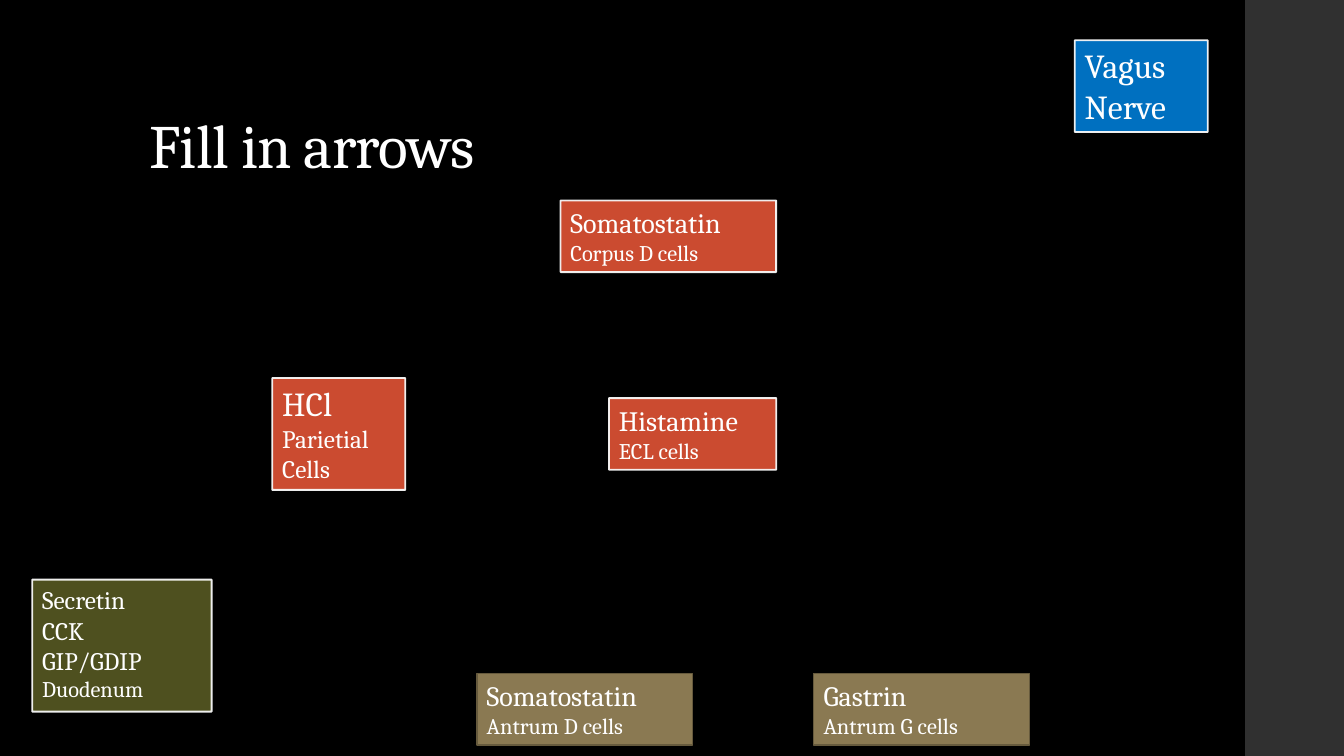
from lxml import etree
from pptx import Presentation
from pptx.dml.color import RGBColor
from pptx.enum.shapes import MSO_SHAPE
from pptx.enum.text import MSO_ANCHOR, MSO_AUTO_SIZE, PP_ALIGN
from pptx.oxml.ns import qn
from pptx.util import Inches, Pt

RECTANGLE = MSO_SHAPE.RECTANGLE
LEFT = PP_ALIGN.LEFT
TOP, BOTTOM = MSO_ANCHOR.TOP, MSO_ANCHOR.BOTTOM
GROW, FIXED = MSO_AUTO_SIZE.SHAPE_TO_FIT_TEXT, MSO_AUTO_SIZE.NONE

WIDTH, HEIGHT = Inches(13.33), Inches(7.5)
FONT = "Cambria"

BLACK = RGBColor(0x00, 0x00, 0x00)
WHITE = RGBColor(0xFF, 0xFF, 0xFF)
SIDEBAR_GREY = RGBColor(0x30, 0x30, 0x30)
CORPUS_RED = RGBColor(0xCB, 0x4B, 0x30)
ANTRUM_TAN = RGBColor(0x8A, 0x79, 0x52)
NERVE_BLUE = RGBColor(0x00, 0x70, 0xC0)
DUODENUM_GREEN = RGBColor(0x4E, 0x50, 0x1F)
PALE_BORDER = RGBColor(0xF9, 0xF9, 0xF9)
TAN_BORDER = RGBColor(0x66, 0x5A, 0x3D)

# Sizes as percentages of the slide's width and height
SMALL_BOX = (9.9, 14.8)
NERVE_BOX = (9.9, 12.13)
HISTAMINE_BOX = (12.45, 9.47)
HORMONE_BOX = (16.05, 9.47)
DUODENUM_BOX = (13.35, 17.47)
ANTRUM_TOP = 89.07

# Left and top, size, fill, lines of text with their point sizes
BOXES = [
    ((20.26, 50), SMALL_BOX, CORPUS_RED, [("HCl", 24), ("Parietial Cells", 18)]),
    ((45.31, 52.67), HISTAMINE_BOX, CORPUS_RED,
     [("Histamine", 20), ("ECL cells", 16)]),
    ((41.71, 26.53), HORMONE_BOX, CORPUS_RED,
     [("Somatostatin", 20), ("Corpus D cells", 16)]),
    ((35.48, ANTRUM_TOP), HORMONE_BOX, ANTRUM_TAN,
     [("Somatostatin", 20), ("Antrum D cells", 16)]),
    ((60.54, ANTRUM_TOP), HORMONE_BOX, ANTRUM_TAN,
     [("Gastrin", 20), ("Antrum G cells", 16)]),
    ((79.97, 5.33), NERVE_BOX, NERVE_BLUE, [("Vagus Nerve", 24)]),
    ((2.4, 76.67), DUODENUM_BOX, DUODENUM_GREEN,
     [("Secretin", 18), ("CCK", 18), ("GIP/GDIP", 18), ("Duodenum", 16)]),
]


def place(position, size):
    """Turn percentages of the slide into left, top, width and height."""
    return [int(length * share / 100) for length, share
            in zip((WIDTH, HEIGHT) * 2, (*position, *size))]


def format_paragraph(paragraph, size):
    paragraph.alignment = LEFT
    for run in paragraph.runs:
        run.font.name = FONT
        run.font.size = Pt(size)
        run.font.color.rgb = WHITE


def add_rectangle(slide, position, size, fill):
    shape = slide.shapes.add_shape(RECTANGLE, *place(position, size))
    shape.shadow.inherit = False
    shape.fill.solid()
    shape.fill.fore_color.rgb = fill
    return shape


def add_sidebar(slide):
    sidebar = add_rectangle(slide, (92.65, 0), (7.5, 100), SIDEBAR_GREY)
    sidebar.line.fill.background()


def set_title(slide, text):
    title = slide.shapes.title
    title.left, title.top, title.width, title.height = place(
        (10.35, 5.33), (79.52, 19.33))
    frame = title.text_frame
    frame.text = text
    frame.word_wrap = True
    frame.auto_size = FIXED
    frame.vertical_anchor = BOTTOM
    paragraph = frame.paragraphs[0]
    paragraph.line_spacing = 0.9
    format_paragraph(paragraph, 44)
    paragraph.runs[0].font._element.set("spc", "-50")


def set_border(shape, fill):
    line = shape.line
    if fill == ANTRUM_TAN:
        line.color.rgb = TAN_BORDER
        line.width = Pt(1.1)
    else:
        line.color.rgb = PALE_BORDER
        line.width = Pt(1.35)
        color = shape._element.spPr.find(qn("a:ln")).find(".//" + qn("a:srgbClr"))
        etree.SubElement(color, qn("a:alpha")).set("val", "95000")


def add_label_box(slide, position, size, fill, lines):
    box = add_rectangle(slide, position, size, fill)
    set_border(box, fill)
    frame = box.text_frame
    frame.text = "\n".join(text for text, _ in lines)
    frame.word_wrap = True
    frame.auto_size = GROW
    frame.vertical_anchor = TOP
    for paragraph, (_, points) in zip(frame.paragraphs, lines):
        format_paragraph(paragraph, points)


def main():
    presentation = Presentation()
    presentation.slide_width, presentation.slide_height = WIDTH, HEIGHT
    slide = presentation.slides.add_slide(presentation.slide_layouts[5])
    slide.background.fill.solid()
    slide.background.fill.fore_color.rgb = BLACK
    add_sidebar(slide)
    set_title(slide, "Fill in arrows")
    for box in BOXES:
        add_label_box(slide, *box)
    presentation.save("out.pptx")


if __name__ == "__main__":
    main()
